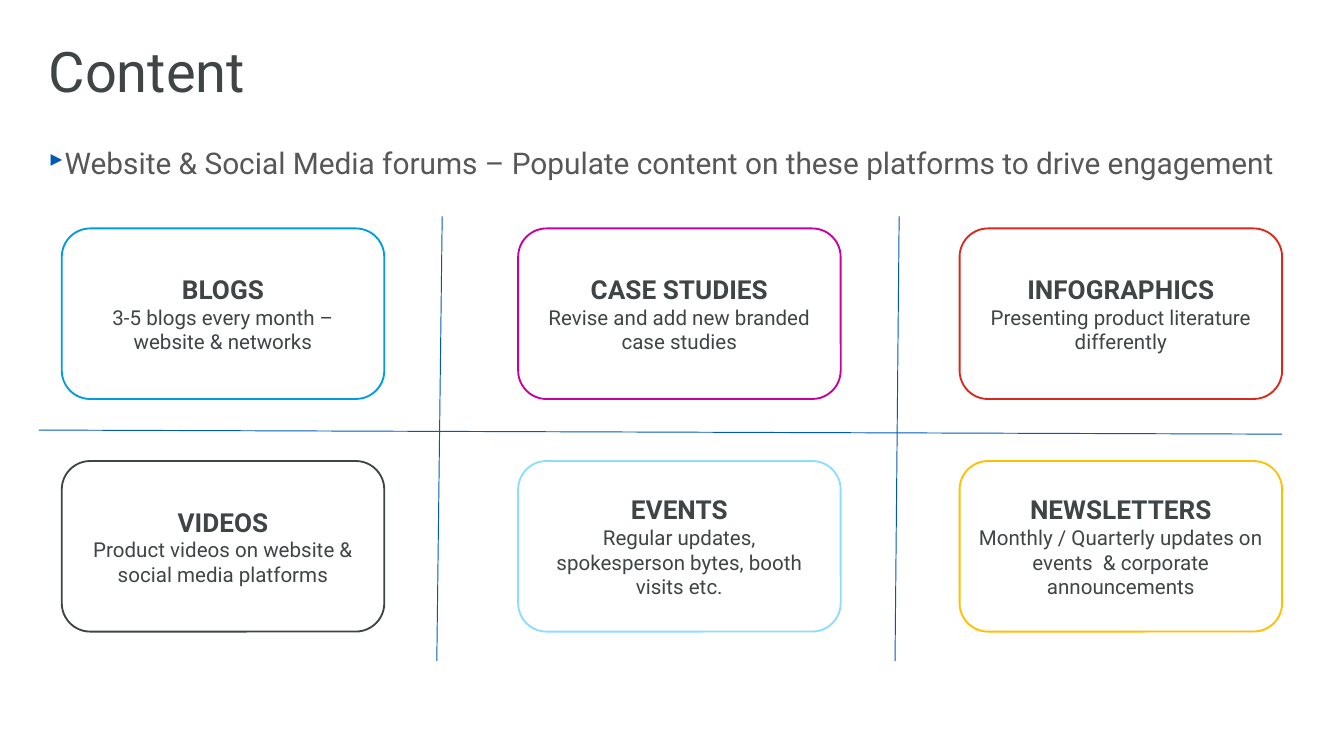
from lxml.etree import SubElement
from pptx import Presentation
from pptx.dml.color import RGBColor
from pptx.enum.shapes import MSO_CONNECTOR, MSO_SHAPE
from pptx.enum.text import MSO_ANCHOR, PP_ALIGN
from pptx.oxml.ns import qn
from pptx.util import Pt

COLORS = {
    "white": "FFFFFF", "dark": "3F4444", "gray": "575757", "blue": "0059B9",
    "cyan": "009CDE", "magenta": "C800A1", "red": "DA281C",
    "sky": "8CDDFF", "yellow": "FFC000",
}
CARD_WIDTH, CARD_HEIGHT = 172.8, 91.4
COLUMNS = (33.1, 277.6, 514.1)
ROWS = (122.4, 247)
CARDS = (
    (
        ("BLOGS", "3-5 blogs every month – website & networks", "cyan"),
        ("CASE STUDIES", "Revise and add new branded case studies", "magenta"),
        ("INFOGRAPHICS", "Presenting product literature differently", "red"),
    ),
    (
        ("VIDEOS", "Product videos on website & social media platforms", "dark"),
        ("EVENTS", "Regular updates, spokesperson bytes, booth visits etc.", "sky"),
        ("NEWSLETTERS", "Monthly / Quarterly updates on events  & corporate announcements", "yellow"),
    ),
)
DIVIDERS = (
    (20.9, 230.4, 686.9, 232.6),
    (236.9, 115.9, 234, 354.2),
    (481.7, 115.9, 479.5, 354.2),
)


class SlideBuilder:
    """Holds the slide and its style, and draws each kind of element."""

    font_name = "Roboto"

    def __init__(self, slide):
        self.slide = slide

    def color(self, name):
        return RGBColor.from_string(COLORS[name])

    def frame(self, shape, anchor):
        frame = shape.text_frame
        frame.word_wrap = True
        frame.vertical_anchor = anchor
        frame.margin_left = frame.margin_right = Pt(5.2)
        frame.margin_top = frame.margin_bottom = Pt(2.6)
        return frame

    def run(self, paragraph, text, size, color="dark", bold=False):
        run = paragraph.add_run()
        run.text = text
        run.font.name = self.font_name
        run.font.size = Pt(size)
        run.font.bold = bold
        run.font.color.rgb = self.color(color)

    def text_box(self, left, top, width, height, anchor):
        shape = self.slide.shapes.add_textbox(Pt(left), Pt(top), Pt(width), Pt(height))
        return self.frame(shape, anchor).paragraphs[0]

    def title(self, text):
        paragraph = self.text_box(20.9, 15.8, 509, 48.2, MSO_ANCHOR.MIDDLE)
        paragraph.line_spacing = 0.9
        self.run(paragraph, text, 30)

    def bullet(self, text):
        paragraph = self.text_box(20.9, 74.9, 699.1, 319, MSO_ANCHOR.TOP)
        properties = paragraph._p.get_or_add_pPr()
        properties.set("marL", str(Pt(8.6)))
        properties.set("indent", str(-Pt(8.6)))
        bullet_color = SubElement(properties, qn("a:buClr"))
        SubElement(bullet_color, qn("a:srgbClr"), val=COLORS["blue"])
        SubElement(properties, qn("a:buSzPct"), val="80000")
        SubElement(properties, qn("a:buChar"), char="▸")
        self.run(paragraph, text, 16, "gray")

    def card(self, left, top, heading, detail, color):
        shape = self.slide.shapes.add_shape(
            MSO_SHAPE.ROUNDED_RECTANGLE, Pt(left), Pt(top), Pt(CARD_WIDTH), Pt(CARD_HEIGHT))
        shape.shadow.inherit = False
        shape.fill.solid()
        shape.fill.fore_color.rgb = self.color("white")
        shape.line.color.rgb = self.color(color)
        shape.line.width = Pt(1)
        frame = self.frame(shape, MSO_ANCHOR.MIDDLE)
        heading_paragraph, detail_paragraph = frame.paragraphs[0], frame.add_paragraph()
        heading_paragraph.alignment = detail_paragraph.alignment = PP_ALIGN.CENTER
        self.run(heading_paragraph, heading, 14, bold=True)
        self.run(detail_paragraph, detail, 11)

    def divider(self, *ends):
        connector = self.slide.shapes.add_connector(
            MSO_CONNECTOR.STRAIGHT, *(Pt(value) for value in ends))
        connector.line.color.rgb = self.color("blue")
        connector.line.width = Pt(0.5)
        SubElement(connector._element.spPr, qn("a:effectLst"))


def main():
    presentation = Presentation()
    presentation.slide_width, presentation.slide_height = Pt(720), Pt(405)
    builder = SlideBuilder(presentation.slides.add_slide(presentation.slide_layouts[6]))
    builder.bullet("Website & Social Media forums – Populate content on these platforms to drive engagement")
    builder.title("Content")
    for top, cards in zip(ROWS, CARDS):
        for left, card in zip(COLUMNS, cards):
            builder.card(left, top, *card)
    for ends in DIVIDERS:
        builder.divider(*ends)
    presentation.save("out.pptx")


if __name__ == "__main__":
    main()
